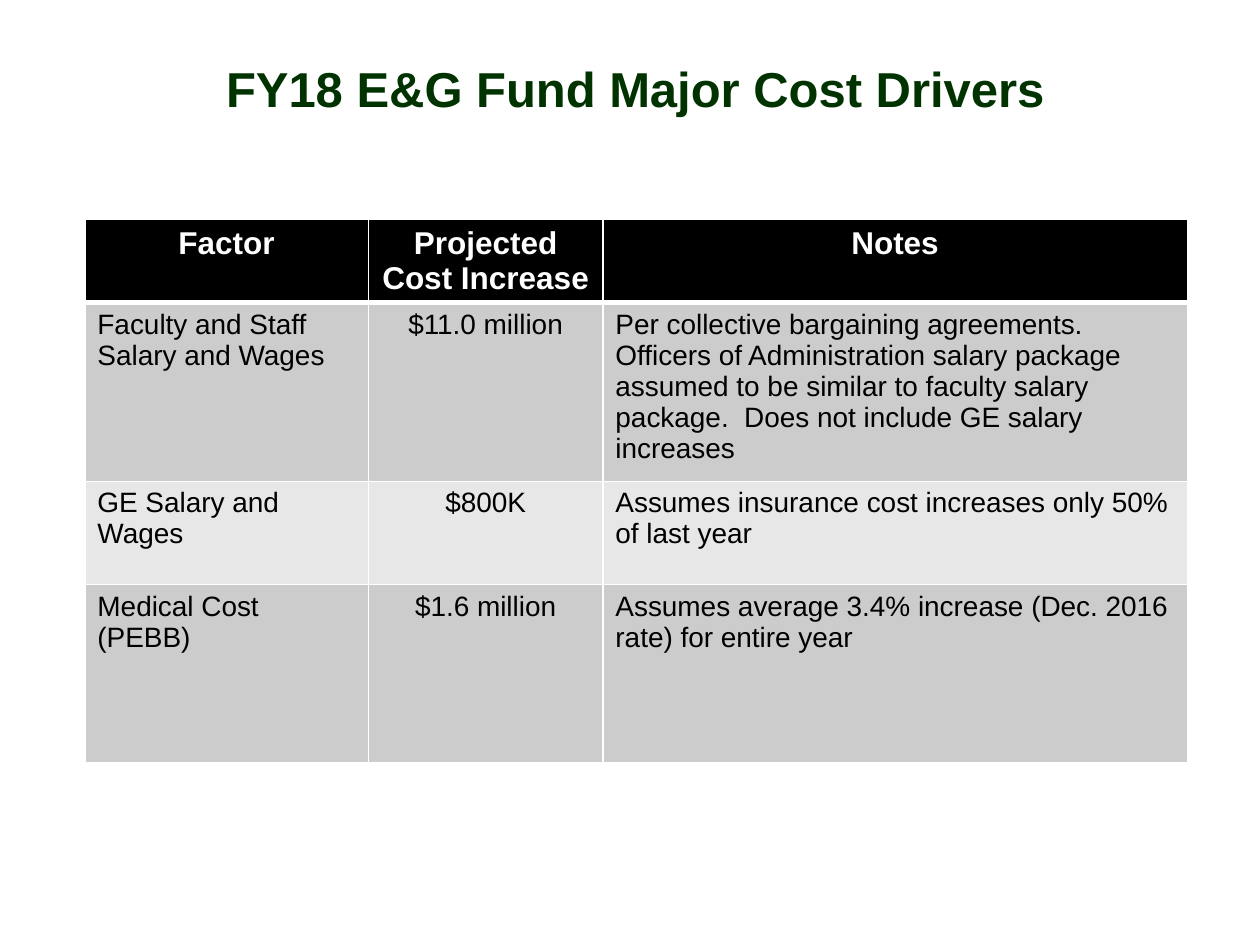
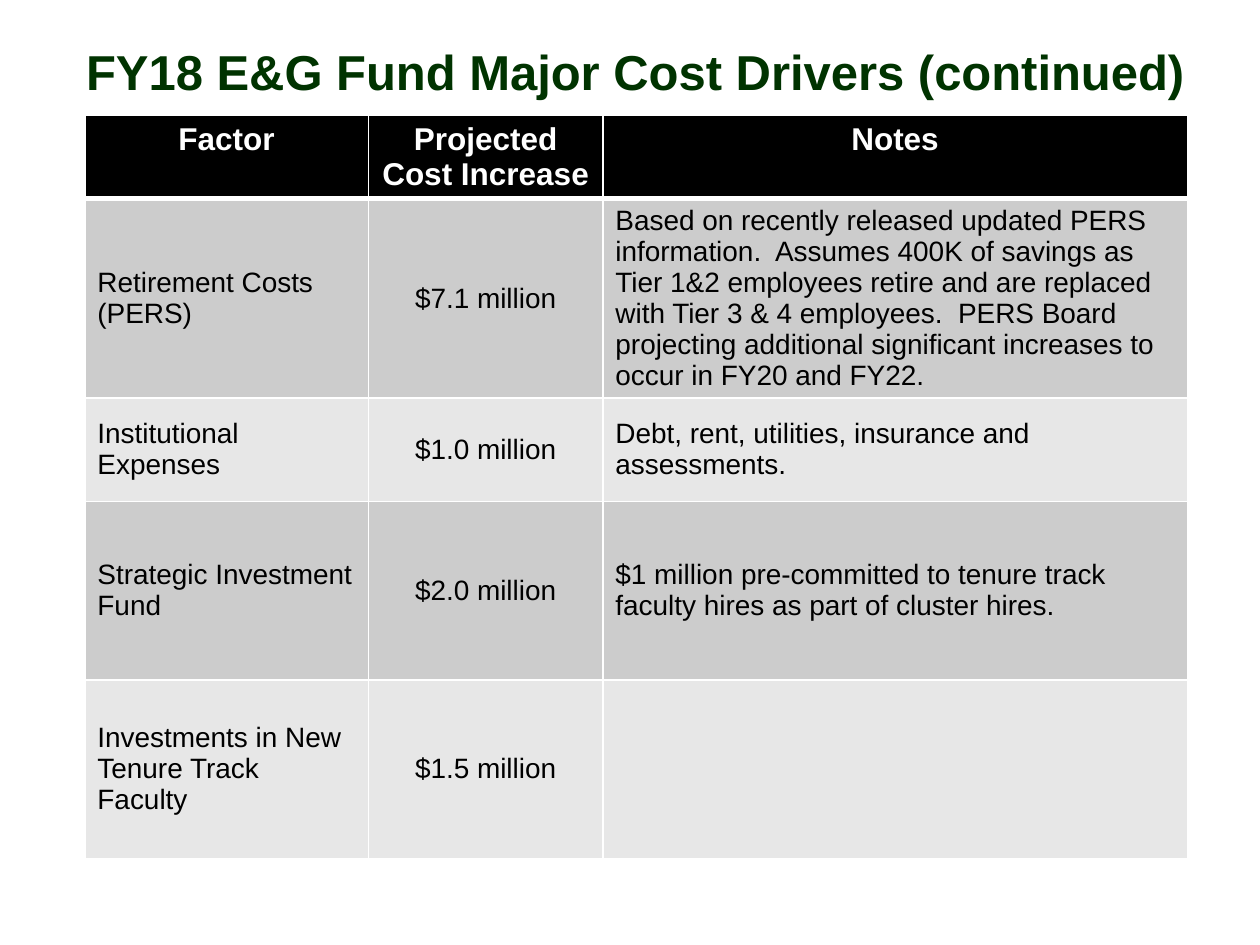
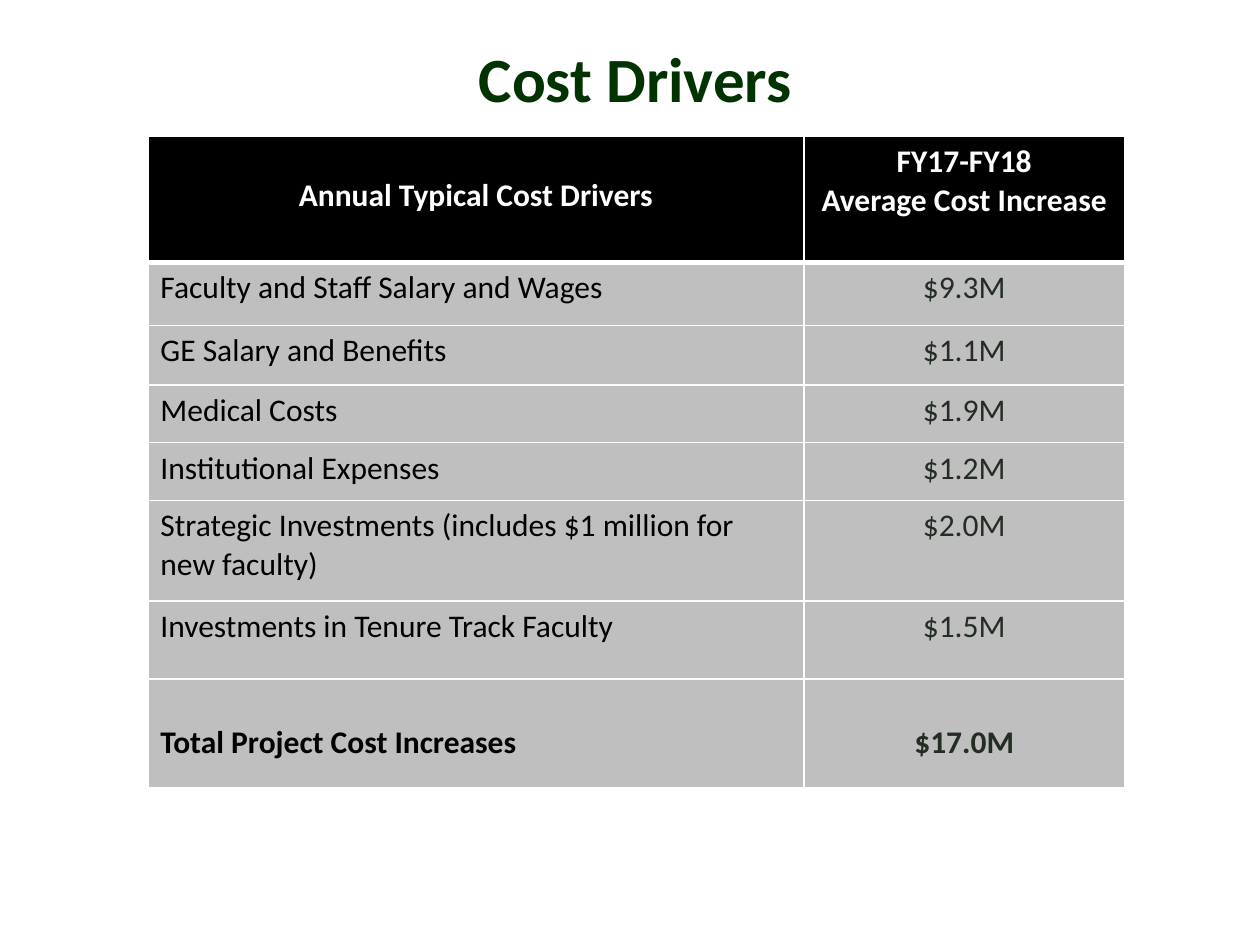
"""Builds three slides of fund cost driver tables."""
from lxml import etree
from pptx import Presentation
from pptx import util as u
from pptx.dml import color
from pptx.enum import text
from pptx.oxml import ns

GREEN, BLACK, WHITE, INK = "003300", "000000", "FFFFFF", "232D23"
DARK_BAND, LIGHT_BAND, GREY = "CCCCCC", "E7E7E7", "BFBFBF"
TOP, MIDDLE = text.MSO_ANCHOR.TOP, text.MSO_ANCHOR.MIDDLE
LEFT, CENTER = text.PP_ALIGN.LEFT, text.PP_ALIGN.CENTER


def style(paragraph, align, face, size, hex_color, bold):
    paragraph.alignment = align
    for run in paragraph.runs:
        run.font.name = face
        run.font.size = u.Pt(size)
        run.font.bold = bold
        run.font.color.rgb = color.RGBColor.from_string(hex_color)


def add_border(cell, side, width):
    edge = etree.SubElement(cell._tc.get_or_add_tcPr(), ns.qn("a:ln" + side), w=str(u.Pt(width)))
    fill = etree.SubElement(edge, ns.qn("a:solidFill"))
    etree.SubElement(fill, ns.qn("a:srgbClr"), val=WHITE)


factor_header = ["Factor", "Projected Cost Increase", "Notes"]
factor_table = {"face": "Arial", "title_size": 28, "body_size": 16, "left": 48.5,
                "columns": [162, 134, 334], "bands": [DARK_BAND, LIGHT_BAND],
                "amount_color": BLACK, "lowered": {}, "bold_rows": [0]}
pages = [
    factor_table | {
        "title": "FY18 E&G Fund Major Cost Drivers", "title_top": 6, "top": 125.5,
        "heights": [47, 102, 59, 102], "anchor": TOP,
        "rows": [
            factor_header,
            ["Faculty and Staff Salary and Wages", "$11.0 million",
             "Per collective bargaining agreements.  Officers of Administration salary package "
             "assumed to be similar to faculty salary package.  Does not include GE salary increases"],
            ["GE Salary and Wages", "$800K", "Assumes insurance cost increases only 50% of last year"],
            ["Medical Cost (PEBB)", "$1.6 million",
             "Assumes average 3.4% increase (Dec. 2016 rate) for entire year"],
        ]},
    factor_table | {
        "title": "FY18 E&G Fund Major Cost Drivers (continued)", "title_top": -3.5, "top": 66,
        "heights": [47, 114, 59, 102, 102], "anchor": MIDDLE,
        "rows": [
            factor_header,
            ["Retirement Costs (PERS)", "$7.1 million",
             "Based on recently released updated PERS information.  Assumes 400K of savings as "
             "Tier 1&2 employees retire and are replaced with Tier 3 & 4 employees.  PERS Board "
             "projecting additional significant increases to occur in FY20 and FY22."],
            ["Institutional Expenses", "$1.0 million", "Debt, rent, utilities, insurance and assessments."],
            ["Strategic Investment Fund", "$2.0 million",
             "$1 million pre-committed to tenure track faculty hires as part of cluster hires."],
            ["Investments in New Tenure Track Faculty", "$1.5 million", ""],
        ]},
    {
        "title": "Cost Drivers", "title_top": 0, "top": 78, "left": 84.5,
        "face": "Calibri", "title_size": 36, "body_size": 18,
        "columns": [375, 183], "heights": [72, 36, 34, 33, 33, 57.5, 44.5, 62.5],
        "anchor": TOP, "bands": [GREY], "amount_color": INK, "bold_rows": [0, 7],
        "lowered": {(0, 0): 23, (7, 0): 25.5, (7, 1): 25.5},
        "rows": [
            ["Annual Typical Cost Drivers", "FY17-FY18\nAverage Cost Increase"],
            ["Faculty and Staff Salary and Wages", "$9.3M"],
            ["GE Salary and Benefits", "$1.1M"],
            ["Medical Costs", "$1.9M"],
            ["Institutional Expenses", "$1.2M"],
            ["Strategic Investments (includes $1 million for new faculty)", "$2.0M"],
            ["Investments in Tenure Track Faculty", "$1.5M"],
            ["Total Project Cost Increases", "$17.0M"],
        ]},
]

deck = Presentation()
deck.slide_width, deck.slide_height = u.Pt(720), u.Pt(540)

for page in pages:
    slide = deck.slides.add_slide(deck.slide_layouts[5])
    heading = slide.shapes.title
    heading.left, heading.top = u.Pt(24), u.Pt(page["title_top"])
    heading.width, heading.height = u.Pt(678), u.Pt(88)
    heading.text_frame.text = page["title"]
    heading.text_frame.vertical_anchor = MIDDLE
    heading.text_frame.auto_size = text.MSO_AUTO_SIZE.NONE
    style(heading.text_frame.paragraphs[0], CENTER, page["face"], page["title_size"], GREEN, True)

    rows, columns, heights = page["rows"], page["columns"], page["heights"]
    drivers = slide.shapes.add_table(
        len(rows), len(columns), u.Pt(page["left"]), u.Pt(page["top"]),
        u.Pt(sum(columns)), u.Pt(sum(heights))).table
    for column, width in zip(drivers.columns, columns):
        column.width = u.Pt(width)
    for r, entries in enumerate(rows):
        drivers.rows[r].height = u.Pt(heights[r])
        for c, entry in enumerate(entries):
            cell = drivers.cell(r, c)
            cell.text = entry
            cell.vertical_anchor = page["anchor"] if r else TOP
            if (r, c) in page["lowered"]:
                cell.margin_top = u.Pt(page["lowered"][r, c])
            for side, width in [("L", 1), ("R", 1), ("T", 3 if r == 1 else 1), ("B", 1 if r else 3)]:
                add_border(cell, side, width)
            band = page["bands"][(r - 1) % len(page["bands"])] if r else BLACK
            cell.fill.solid()
            cell.fill.fore_color.rgb = color.RGBColor.from_string(band)
            ink = WHITE if r == 0 else page["amount_color"] if c == 1 else BLACK
            for paragraph in cell.text_frame.paragraphs:
                style(paragraph, CENTER if r == 0 or c == 1 else LEFT, page["face"],
                      page["body_size"] if r else 18, ink, r in page["bold_rows"])

deck.save("out.pptx")
